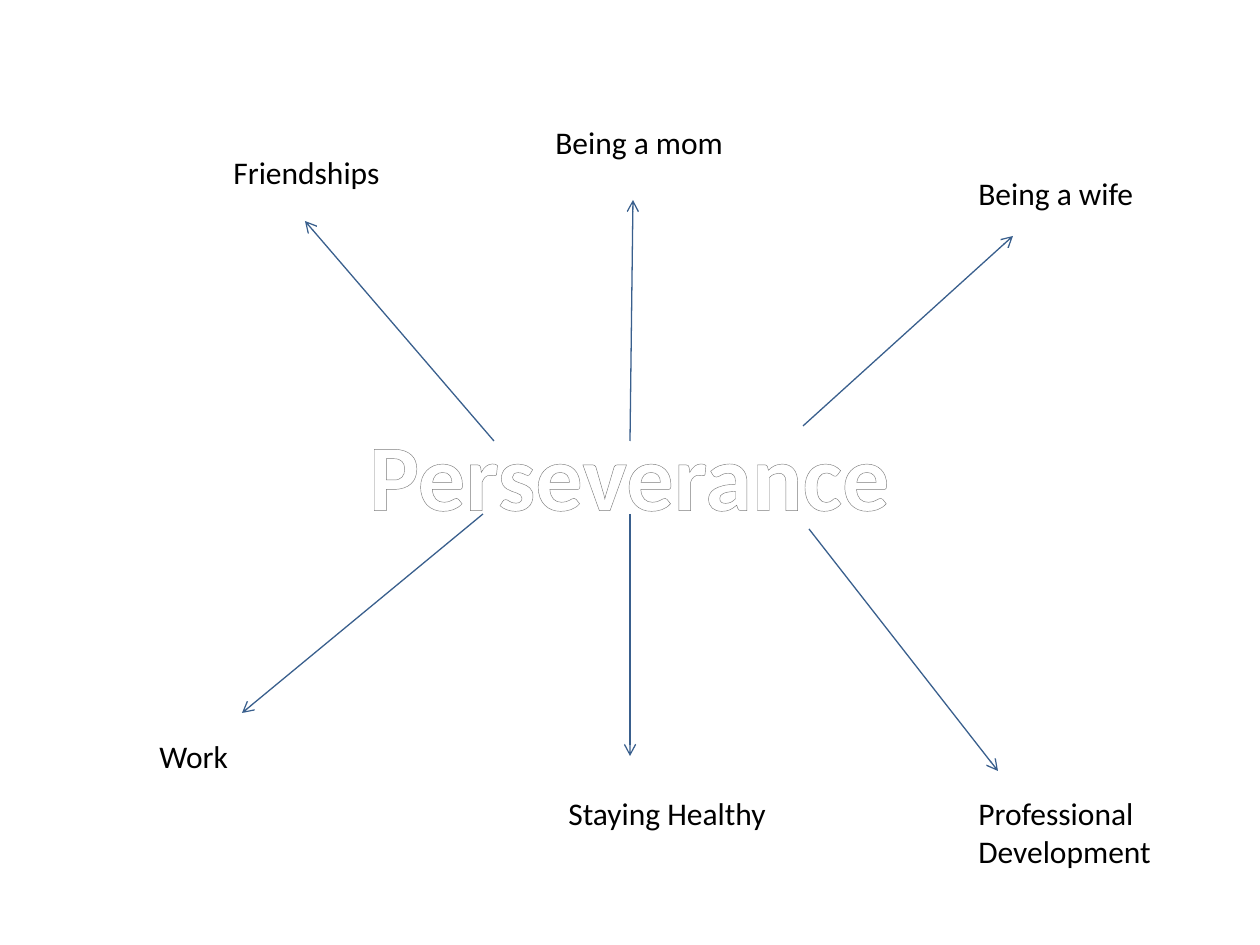
from dataclasses import dataclass

from pptx import Presentation
from pptx.dml.color import RGBColor
from pptx.enum.shapes import MSO_CONNECTOR
from pptx.enum.text import MSO_AUTO_SIZE, PP_ALIGN
from pptx.oxml import parse_xml
from pptx.oxml.ns import nsdecls
from pptx.util import Emu, Pt


@dataclass(frozen=True)
class Theme:
    font: str = "Calibri"
    label_size: int = 18
    value_size: int = 54
    ink: str = "000000"
    arrow: str = "395F8D"
    arrow_width: float = 0.75
    outline: str = "7D7D7D"
    outline_width: float = 0.83
    gradient: tuple = ((0, "FFFFFF"), (9, "FFFFFF"), (50, "7F7F7F"), (79, "FFFFFF"), (100, "FFFFFF"))


THEME = Theme()
SLIDE_SIZE = (1260, 945)
EMU_PER_PX = 914400 / 126

CORE_VALUE = ("Perseverance", (354, 410, 551, 127))

LIFE_AREAS = [
    ("Friendships", (221, 147, 174, 50), (494, 441), (305, 221)),
    ("Work", (147, 731, 95, 50), (483, 514), (242, 713)),
    ("Staying Healthy", (556, 788, 226, 50), (630, 514), (630, 756)),
    ("Being a wife", (966, 168, 183, 50), (803, 426), (1013, 236)),
    ("Professional\nDevelopment", (966, 788, 200, 89), (809, 529), (998, 771)),
    ("Being a mom", (543, 117, 195, 50), (630, 441), (633, 200)),
]


def px(*lengths):
    return [Emu(round(length * EMU_PER_PX)) for length in lengths]


def add_label(slide, text, box, size, **formats):
    frame = slide.shapes.add_textbox(*px(*box)).text_frame
    frame.word_wrap = False
    frame.auto_size = MSO_AUTO_SIZE.SHAPE_TO_FIT_TEXT
    frame.text = text
    font_formats = {"name": THEME.font, "size": Pt(size), **formats}
    for paragraph in frame.paragraphs:
        for run in paragraph.runs:
            for attribute, value in font_formats.items():
                setattr(run.font, attribute, value)
            run.font.color.rgb = RGBColor.from_string(THEME.ink)
    return frame.paragraphs[0]


def add_core_value(slide):
    paragraph = add_label(slide, *CORE_VALUE, THEME.value_size, bold=True)
    paragraph.alignment = PP_ALIGN.CENTER
    font = paragraph.runs[0].font
    font.fill.background()
    properties = paragraph.runs[0]._r.get_or_add_rPr()
    stops = "".join(
        f'<a:gs pos="{position * 1000}"><a:srgbClr val="{color}"/></a:gs>'
        for position, color in THEME.gradient
    )
    gradient = parse_xml(
        f'<a:gradFill {nsdecls("a")}><a:gsLst>{stops}</a:gsLst><a:lin ang="5400000"/></a:gradFill>'
    )
    outline = parse_xml(
        f'<a:ln {nsdecls("a")} w="{Pt(THEME.outline_width)}"><a:solidFill>'
        f'<a:srgbClr val="{THEME.outline}"/></a:solidFill></a:ln>'
    )
    properties.replace(properties[0], gradient)
    properties.insert(0, outline)


def add_arrow(slide, start, end):
    arrow = slide.shapes.add_connector(MSO_CONNECTOR.STRAIGHT, *px(*start, *end))
    arrow.line.color.rgb = RGBColor.from_string(THEME.arrow)
    arrow.line.width = Pt(THEME.arrow_width)
    arrow.line._get_or_add_ln().append(parse_xml(f'<a:tailEnd {nsdecls("a")} type="arrow"/>'))
    arrow._element.spPr.append(parse_xml(f'<a:effectLst {nsdecls("a")}/>'))


def main():
    presentation = Presentation()
    presentation.slide_width, presentation.slide_height = px(*SLIDE_SIZE)
    slide = presentation.slides.add_slide(presentation.slide_layouts[6])
    add_core_value(slide)
    for area, box, start, end in LIFE_AREAS:
        add_arrow(slide, start, end)
        add_label(slide, area, box, THEME.label_size)
    presentation.save("out.pptx")


if __name__ == "__main__":
    main()
